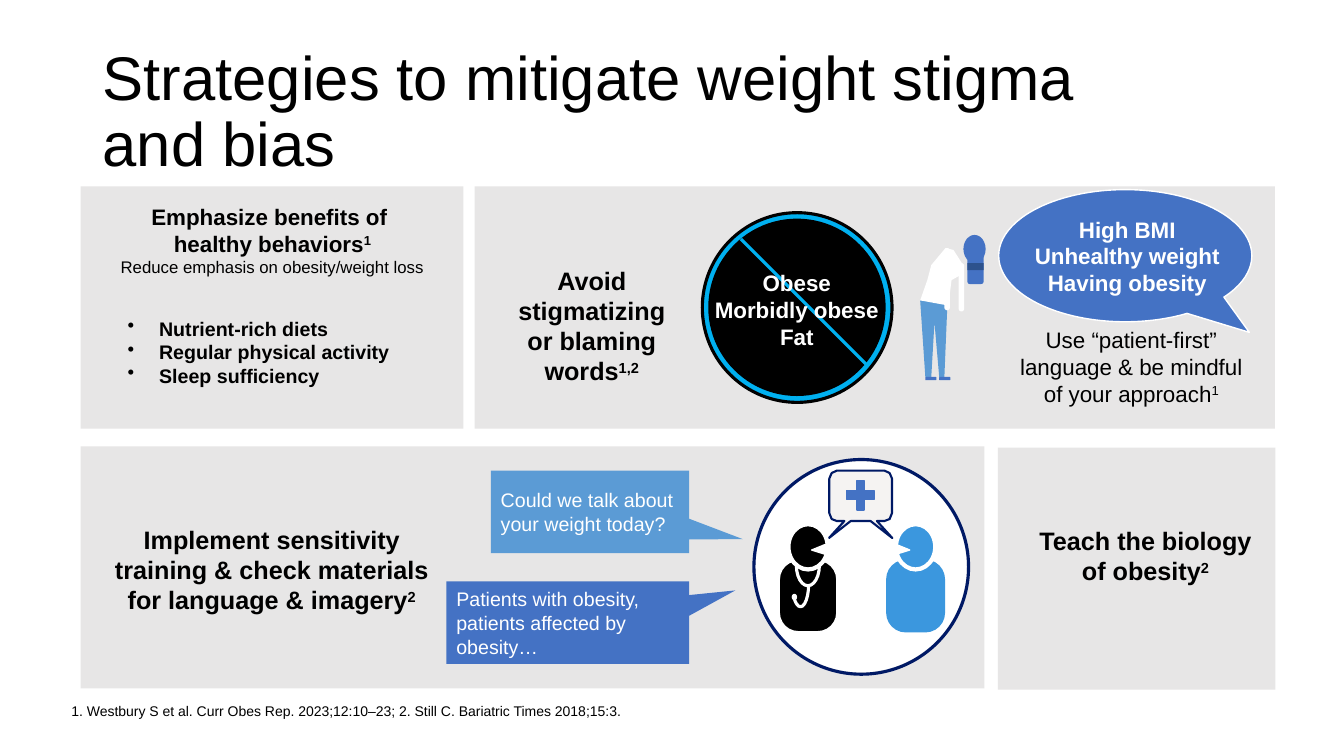
from collections import namedtuple

from lxml import etree
from pptx import Presentation
from pptx import util as u
from pptx.dml.color import RGBColor
from pptx.enum import shapes, text
from pptx.oxml import ns

Box = namedtuple("Box", "left top width height")
KIND = shapes.MSO_SHAPE
CENTER = text.PP_ALIGN.CENTER
MIDDLE = text.MSO_ANCHOR.MIDDLE
BLACK = RGBColor(0x00, 0x00, 0x00)
WHITE = RGBColor(0xFF, 0xFF, 0xFF)
GREY = RGBColor(0xE7, 0xE6, 0xE6)
PALE = RGBColor(0xF5, 0xF3, 0xF2)
BLUE = RGBColor(0x44, 0x72, 0xC4)
DARK_BLUE = RGBColor(0x2D, 0x52, 0x8D)
LIGHT_BLUE = RGBColor(0x5B, 0x9B, 0xD5)
PATIENT_BLUE = RGBColor(0x3B, 0x97, 0xDE)
CYAN = RGBColor(0x00, 0xB0, 0xF0)
NAVY = RGBColor(0x00, 0x19, 0x65)
PANEL_HEIGHT = 6.1


def inside(box, left, top, width, height):
    return Box(box.left + left, box.top + top, width, height)


def paint(shape, fill=None, line=None, weight=1):
    shape.shadow.inherit = False
    if fill is None:
        shape.fill.background()
    else:
        shape.fill.solid()
        shape.fill.fore_color.rgb = fill
    if line is None:
        shape.line.fill.background()
    else:
        shape.line.color.rgb = line
        shape.line.width = u.Pt(weight)
    return shape


def add_shape(page, kind, box, fill=None, line=None, weight=1, adjust=(), turn=0):
    shape = page.shapes.add_shape(kind, *map(u.Cm, box))
    for index, value in enumerate(adjust):
        shape.adjustments[index] = value
    shape.rotation = turn
    return paint(shape, fill, line, weight)


def add_outline(page, box, points, fill, line=None, weight=1):
    points = [(u.Cm(box.left + x), u.Cm(box.top + y)) for x, y in points]
    builder = page.shapes.build_freeform(*points[0], scale=1.0)
    builder.add_line_segments(points[1:], close=True)
    return paint(builder.convert_to_shape(), fill, line, weight)


def style(para, words, size, color, bold):
    span = para.add_run()
    span.text = words
    for name, value in {"name": "Arial", "size": u.Pt(size), "bold": bold}.items():
        setattr(span.font, name, value)
    span.font.color.rgb = color
    return span


def write(shape, paras, size, color=BLACK, bold=False, raised="", bullet=False,
          frame=None, **para_format):
    words = shape.text_frame
    settings = {"word_wrap": True, "vertical_anchor": text.MSO_ANCHOR.TOP, **(frame or {})}
    for name, value in settings.items():
        setattr(words, name, value)
    for index, line in enumerate(paras):
        para = words.paragraphs[0] if index == 0 else words.add_paragraph()
        for name, value in {"alignment": text.PP_ALIGN.LEFT, **para_format}.items():
            setattr(para, name, value)
        if bullet:
            props = para._p.get_or_add_pPr()
            props.set("marL", str(u.Cm(0.79)))
            props.set("indent", str(-u.Cm(0.79)))
            etree.SubElement(props, ns.qn("a:buChar")).set("char", "•")
        for part, piece in enumerate(line.split("\n")):
            if part:
                para.add_line_break()
            style(para, piece, size, color, bold)
    if raised:
        span = style(para, raised, size, color, bold)
        span._r.get_or_add_rPr().set("baseline", "30000")
    return words


def add_text(page, box, paras, size, **options):
    return write(page.shapes.add_textbox(*map(u.Cm, box)), paras, size, **options)


def add_heading(page, box, words, raised):
    shape = add_shape(page, KIND.RECTANGULAR_CALLOUT, box, adjust=(-0.04, 0.87))
    write(shape, [words], 18, bold=True, raised=raised, alignment=CENTER)


def add_benefits(page, box):
    add_shape(page, KIND.RECTANGLE, box, GREY)
    words = add_text(page, inside(box, 0.15, 0.3, 9.37, 2.13),
                     ["Emphasize benefits of \nhealthy behaviors"], 16,
                     bold=True, raised="1", alignment=CENTER)
    para = words.add_paragraph()
    para.alignment = CENTER
    style(para, "Reduce emphasis on obesity/weight loss", 12, BLACK, False)
    add_text(page, inside(box, 0.94, 3.15, 7.8, 2.06),
             ["Nutrient-rich diets", "Regular physical activity", "Sleep sufficiency"], 14,
             bold=True, bullet=True)


def add_person(page, box):
    legs = [(0, 1.65), (0.69, 1.65), (0.61, 3.58), (0.48, 3.58),
            (0.36, 2.2), (0.28, 3.58), (0.13, 3.58)]
    torso = [(1.07, 0.74), (0.84, 0.38), (0.64, 0.33), (0.28, 0.76), (0.18, 1.14),
             (0, 1.65), (0.71, 1.78), (0.79, 1.14), (1.04, 1)]
    add_outline(page, box, legs, LIGHT_BLUE)
    for left in (0.13, 0.48):
        add_shape(page, KIND.ROUNDED_RECTANGLE, inside(box, left, 3.58, 0.28, 0.08), BLUE)
    add_outline(page, box, torso, WHITE)
    for left, top, height in ((0.61, 0.33, 1.57), (0.97, 0.71, 1.22)):
        add_shape(page, KIND.ROUNDED_RECTANGLE, inside(box, left, top, 0.14, height), WHITE,
                  adjust=(0.5,))
    add_shape(page, KIND.OVAL, inside(box, 1.09, 0, 0.56, 0.71), BLUE)
    add_shape(page, KIND.ROUNDED_RECTANGLE, inside(box, 1.19, 0.3, 0.41, 0.94), BLUE)
    add_shape(page, KIND.RECTANGLE, inside(box, 1.19, 0.71, 0.41, 0.18), DARK_BLUE)


def add_wording(page, box):
    add_shape(page, KIND.RECTANGLE, box, GREY)
    add_text(page, inside(box, 0.81, 1.85, 4.29, 2.39), ["Avoid stigmatizing or blaming words"],
             18, bold=True, raised="1,2", alignment=CENTER)
    add_person(page, inside(box, 11.23, 1.22, 1.65, 3.66))
    add_text(page, inside(box, 13.31, 3.4, 6.48, 2.31),
             ["Use “patient-first” language & be mindful of your approach"], 16,
             raised="1", alignment=CENTER)
    add_shape(page, KIND.OVAL_CALLOUT, inside(box, 13.21, 0.08, 6.38, 3.33), BLUE, WHITE,
              adjust=(0.49, 0.58))
    add_shape(page, KIND.OVAL, inside(box, 5.74, 0.66, 4.78, 4.78), CYAN, BLACK, 2.25)
    add_shape(page, KIND.OVAL, inside(box, 5.89, 0.81, 4.47, 4.47), BLACK)
    ends = inside(box, 6.71, 1.32, 3.15, 3.15)
    strike = page.shapes.add_connector(
        shapes.MSO_CONNECTOR.STRAIGHT, u.Cm(ends.left), u.Cm(ends.top),
        u.Cm(ends.left + ends.width), u.Cm(ends.top + ends.height))
    strike.line.color.rgb = CYAN
    strike.line.width = u.Pt(2.25)
    etree.SubElement(strike._element.spPr, ns.qn("a:effectLst"))
    for left, top, width, terms in (
            (13.77, 0.61, 5.36, ["High BMI", "Unhealthy weight", "Having obesity"]),
            (5.72, 1.96, 4.8, ["Obese", "Morbidly obese", "Fat"])):
        add_text(page, inside(box, left, top, width, 2.3), terms, 16,
                 color=WHITE, bold=True, alignment=CENTER)


def add_talker(page, box, fill, edge, mouth_left, turn):
    add_shape(page, KIND.ROUNDED_RECTANGLE, inside(box, 0, 0.91, 1.45, 1.8), fill, edge,
              adjust=(0.33,))
    add_shape(page, KIND.OVAL, inside(box, 0.23, 0, 0.99, 1.14), fill, WHITE, 3)
    add_shape(page, KIND.ISOSCELES_TRIANGLE, inside(box, mouth_left, 0.41, 0.33, 0.46),
              WHITE, WHITE, turn=turn)


def add_care_bubble(page, box):
    half = [(0.6, 0), (0.73, 0.06), (0.79, 0.2), (0.79, 1.07), (0.73, 1.22),
            (0.6, 1.27), (0.41, 1.27), (0.8, 1.7), (0.25, 1.27)]
    mirrored = [(-x, y) for x, y in reversed(half)]
    add_outline(page, box, half + mirrored, PALE, NAVY, 1.5)
    add_shape(page, KIND.CROSS, inside(box, -0.35, 0.25, 0.69, 0.74), BLUE, BLUE, adjust=(0.37,))


def add_consultation(page, box):
    add_shape(page, KIND.OVAL, inside(box, 0.1, 0.1, 5.21, 5.21), WHITE, WHITE, 3)
    add_care_bubble(page, inside(box, 2.69, 0.28, 0, 0))
    add_talker(page, inside(box, 0.64, 1.63, 1.45, 2.71), BLACK, WHITE, 0.88, 267.5)
    for area, angles in (((1.07, 2.16, 0.58, 1.02), (0, 108)),
                         ((0.97, 2.57, 0.41, 1.14), (4.2, 70.2))):
        add_shape(page, KIND.ARC, inside(box, *area), None, WHITE, 2.25, angles)
    add_shape(page, KIND.OVAL, inside(box, 0.97, 3.4, 0.1, 0.13), WHITE, WHITE)
    add_shape(page, KIND.OVAL, box, None, NAVY, 2.25)
    add_talker(page, inside(box, 3.35, 1.63, 1.45, 2.71), PATIENT_BLUE, PATIENT_BLUE, 0.18, 92.5)


def add_training(page, box):
    add_shape(page, KIND.RECTANGLE, box, GREY)
    add_heading(page, inside(box, 0.36, 1.83, 8.92, 2.39),
                "Implement sensitivity training & check materials for language & imagery", "2")
    for left, top, width, fill, tail, words in (
            (9.22, 3.4, 6.12, BLUE, (0.69, -0.39),
             "Patients with obesity, patients affected by obesity…"),
            (10.34, 0.61, 5, LIGHT_BLUE, (0.77, 0.33),
             "Could we talk about \nyour weight today?")):
        shape = add_shape(page, KIND.RECTANGULAR_CALLOUT, inside(box, left, top, width, 2.08),
                          fill, adjust=tail)
        write(shape, [words], 14, color=WHITE,
              frame={"vertical_anchor": MIDDLE, "margin_right": 0})
    add_consultation(page, inside(box, 16.97, 0.33, 5.41, 5.41))


def add_biology(page, box):
    add_shape(page, KIND.RECTANGLE, box, GREY)
    add_heading(page, inside(box, 0.71, 1.83, 6.02, 2.39), "Teach the biology of obesity", "2")


def main():
    deck = Presentation()
    deck.slide_width, deck.slide_height = u.Cm(33.87), u.Cm(19.05)
    page = deck.slides.add_slide(deck.slide_layouts[6])
    add_text(page, Box(2.34, 1.02, 29.21, 3.68),
             ["Strategies to mitigate weight stigma \nand bias"], 44,
             frame={"vertical_anchor": MIDDLE}, line_spacing=0.9)
    margins = dict.fromkeys(("margin_left", "margin_top", "margin_right", "margin_bottom"), 0)
    add_text(page, Box(1.8, 17.25, 24.03, 0.89),
             ["1. Westbury S et al. Curr Obes Rep. 2023;12:10–23; "
              "2. Still C. Bariatric Times 2018;15:3."], 10,
             frame={"vertical_anchor": text.MSO_ANCHOR.BOTTOM, **margins}, line_spacing=0.9)
    for add_panel, left, top, width in (
            (add_wording, 11.96, 4.7, 20.17), (add_training, 2.03, 11.25, 22.78),
            (add_benefits, 2.03, 4.7, 9.65), (add_biology, 25.15, 11.28, 6.99)):
        add_panel(page, Box(left, top, width, PANEL_HEIGHT))
    deck.save("out.pptx")


if __name__ == "__main__":
    main()
